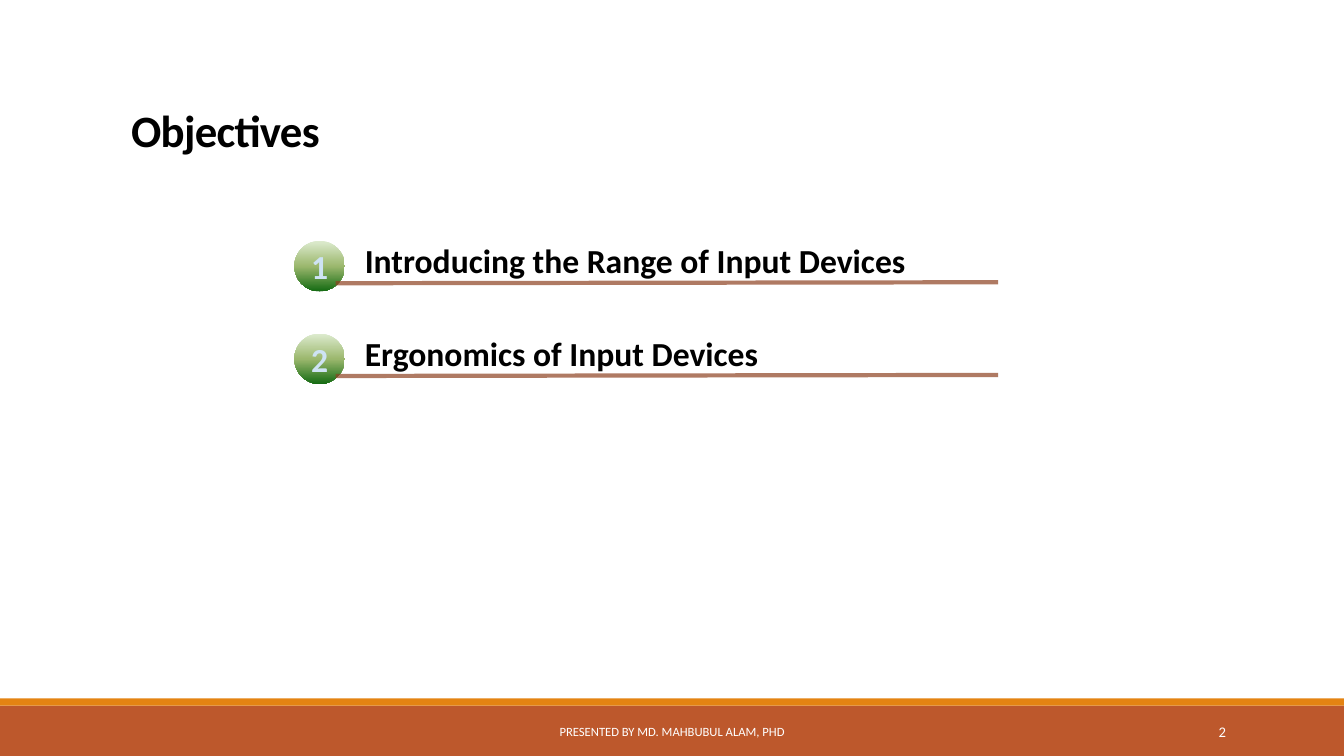
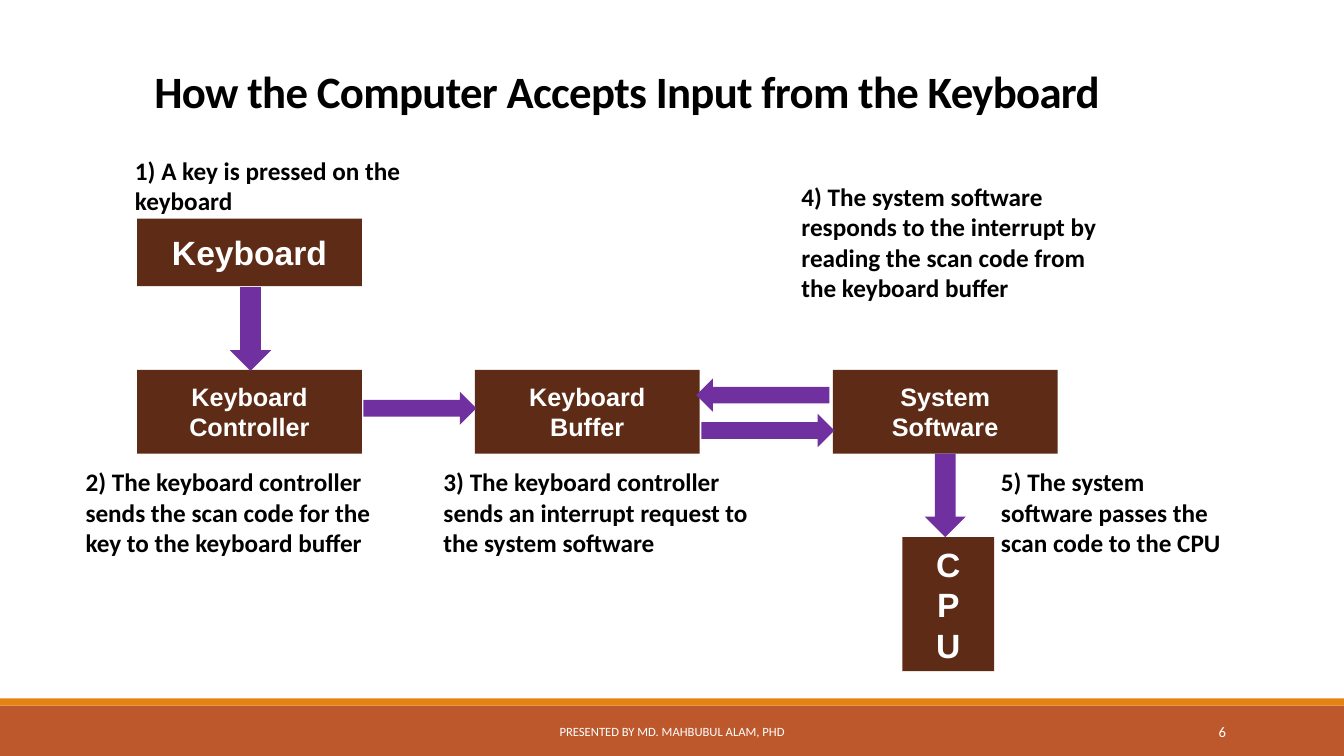
"""Build two slides on input devices: the objectives and the path of a key press."""
import copy

import pptx
import pptx.dml.color
import pptx.enum.shapes
import pptx.enum.text
import pptx.oxml
import pptx.oxml.ns
import pptx.util

Inches = pptx.util.Inches
Pt = pptx.util.Pt
qn = pptx.oxml.ns.qn
SHAPE = pptx.enum.shapes.MSO_SHAPE
ALIGN = pptx.enum.text.PP_ALIGN
ANCHOR = pptx.enum.text.MSO_ANCHOR
color = pptx.dml.color.RGBColor.from_string

BLACK, WHITE = "000000", "FFFFFF"
RUST, ORANGE = "BD582C", "E48312"
BROWN, PURPLE, LINE_BROWN = "5E2C16", "7030A0", "8E4221"
NUMBER_BLUE = "CEE3F4"
GREENS = [(0, "DDEBCF"), (0.5, "9CB86E"), (1, "156B13")]


def add_block(page, preset, left, top, width, height, fill):
    block = page.shapes.add_shape(preset, Inches(left), Inches(top), Inches(width), Inches(height))
    block.shadow.inherit = False
    block.fill.solid()
    block.fill.fore_color.rgb = color(fill)
    block.line.fill.background()
    return block


def write(box, text, size, ink=BLACK, font="Calibri", bold=True, align=ALIGN.LEFT,
          anchor=ANCHOR.TOP, wrap=True):
    frame = box.text_frame
    frame.text = text
    frame.word_wrap = wrap
    frame.auto_size = pptx.enum.text.MSO_AUTO_SIZE.NONE
    frame.vertical_anchor = anchor
    for para in frame.paragraphs:
        para.alignment = align
        para.font.name = font
        para.font.size = Pt(size)
        para.font.bold = bold
        para.font.color.rgb = color(ink)


deck = pptx.Presentation()
deck.slide_width = Inches(13.33)
deck.slide_height = Inches(7.5)
layout = deck.slide_layouts[5]

slides = [
    ("Objectives", (1.2, 0.83, 11, 0.77), "2"),
    ("How the Computer Accepts Input from the Keyboard", (1.43, 0.44, 10.19, 0.78), "6"),
]
pages = []
for heading, (left, top, width, height), number in slides:
    page = deck.slides.add_slide(layout)
    title = page.shapes.title
    title.left, title.top = Inches(left), Inches(top)
    title.width, title.height = Inches(width), Inches(height)
    write(title, heading, 32, anchor=ANCHOR.BOTTOM)
    title.text_frame.paragraphs[0].line_spacing = 0.85
    for properties in title.element.iter(qn("a:defRPr")):
        properties.set("spc", "-50")
    footers = [
        (4.03, 5.27, "PRESENTED BY MD. MAHBUBUL ALAM, PHD", 9, ALIGN.CENTER),
        (10.83, 1.43, number, 10.5, ALIGN.RIGHT),
    ]
    for left, width, text, size, align in footers:
        box = page.shapes.add_textbox(Inches(left), Inches(7.06), Inches(width), Inches(0.4))
        write(box, text, size, WHITE, bold=False, align=align, anchor=ANCHOR.MIDDLE)
    pages.append(page)
objectives, keyboard = pages

for top, height, fill in [(7, 0.5, RUST), (6.93, 0.07, ORANGE)]:
    band = add_block(objectives, SHAPE.RECTANGLE, 0, top, 13.33, height, fill)
    layout.shapes.element.append(band.element)

items = ["Introducing the Range of Input Devices", "Ergonomics of Input Devices"]
for index, item in enumerate(items):
    top = 2.39 + 0.92 * index
    ball = add_block(objectives, SHAPE.OVAL, 2.92, top, 0.5, 0.5, GREENS[0][1])
    ball.fill.gradient()
    ball.fill.gradient_angle = 270
    first_stop = next(ball.element.iter(qn("a:gs")))
    first_stop.addnext(copy.deepcopy(first_stop))
    for stop, (position, green) in zip(ball.fill.gradient_stops, GREENS):
        stop.position = position
        stop.color.rgb = color(green)
    write(ball, str(index + 1), 24, NUMBER_BLUE, align=ALIGN.CENTER,
          anchor=ANCHOR.MIDDLE, wrap=False)

    rule = objectives.shapes.add_connector(
        pptx.enum.shapes.MSO_CONNECTOR.STRAIGHT,
        Inches(3.33), Inches(top + 0.42), Inches(9.9), Inches(top + 0.41))
    rule.line.width = Pt(3)
    rule.line.color.rgb = color(LINE_BROWN)
    for tint in rule.element.spPr.iter(qn("a:srgbClr")):
        pptx.oxml.ns.qn
        alpha = tint.makeelement(qn("a:alpha"), {"val": "70000"})
        tint.append(alpha)
    rule.element.spPr.append(rule.element.spPr.makeelement(qn("a:effectLst"), {}))

    box = objectives.shapes.add_textbox(Inches(3.52), Inches(top - 0.06), Inches(5.84), Inches(0.5))
    write(box, item, 24, wrap=False)

stations = [
    ("Keyboard", 24, 1.36, 2.17, 2.23, 0.67),
    ("Keyboard\nController", 18, 1.36, 3.67, 2.23, 0.83),
    ("Keyboard\nBuffer", 18, 4.71, 3.67, 2.23, 0.83),
    ("System\nSoftware", 18, 8.26, 3.67, 2.23, 0.83),
    ("C\nP\nU", 24, 8.95, 5.33, 0.91, 1.33),
]
for text, size, *place in stations:
    station = add_block(keyboard, SHAPE.RECTANGLE, *place, BROWN)
    write(station, text, size, WHITE, "Arial", align=ALIGN.CENTER,
          anchor=ANCHOR.MIDDLE, wrap=False)

arrows = [
    (2.28, 2.85, 0.41, 0.83, 0),
    (4, 3.49, 0.33, 1.12, 270),
    (7.45, 3.61, 0.33, 1.32, 270),
    (7.4, 3.26, 0.33, 1.32, 90),
    (9.17, 4.5, 0.41, 0.83, 0),
]
for *place, turn in arrows:
    arrow = add_block(keyboard, SHAPE.DOWN_ARROW, *place, PURPLE)
    arrow.rotation = turn

steps = [
    ("1) A key is pressed on the keyboard", 1.24, 1.49, 3.35, 0.71),
    ("2) The keyboard controller sends the scan code for the key to the keyboard buffer",
     0.75, 4.58, 3.35, 1.31),
    ("3) The keyboard controller sends an interrupt request to the system software",
     4.3, 4.58, 3.35, 1.31),
    ("4) The system software responds to the interrupt by reading the scan code from "
     "the keyboard buffer", 7.85, 1.75, 3.35, 1.62),
    ("5) The system software passes the scan code to the CPU", 9.83, 4.58, 2.44, 1.31),
]
for text, *place in steps:
    box = keyboard.shapes.add_textbox(*map(Inches, place))
    write(box, text, 18)

deck.save("out.pptx")
